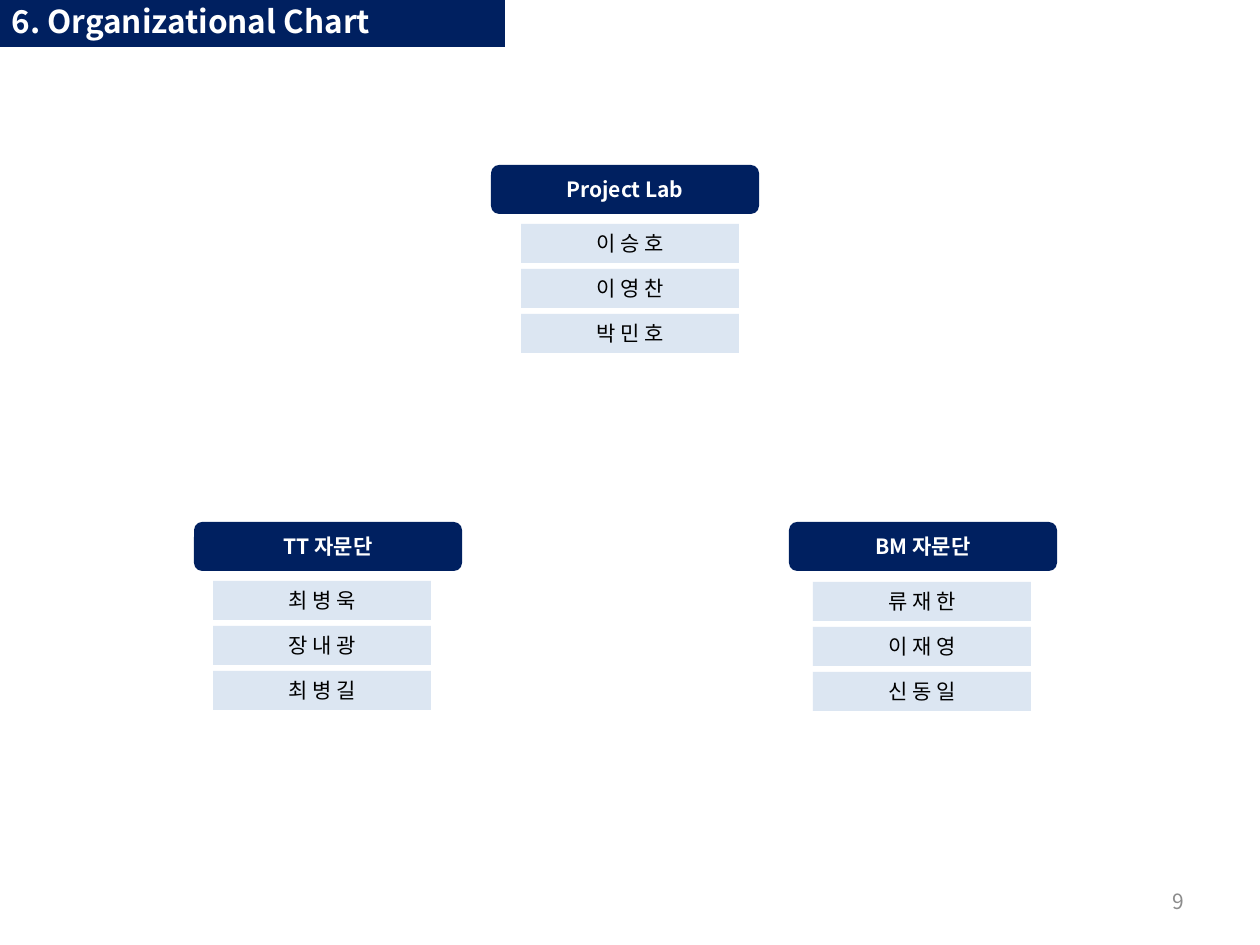
"""Build the organizational chart slide."""
from lxml import etree
from pptx import Presentation
from pptx.dml.color import RGBColor
from pptx.enum.shapes import MSO_SHAPE
from pptx.enum.text import MSO_ANCHOR, MSO_AUTO_SIZE, PP_ALIGN
from pptx.oxml.ns import qn
from pptx.util import Emu, Pt

RECTANGLE, ROUNDED = MSO_SHAPE.RECTANGLE, MSO_SHAPE.ROUNDED_RECTANGLE
TOP, MIDDLE = MSO_ANCHOR.TOP, MSO_ANCHOR.MIDDLE
LEFT, CENTER, RIGHT = PP_ALIGN.LEFT, PP_ALIGN.CENTER, PP_ALIGN.RIGHT
NO_AUTOFIT = MSO_AUTO_SIZE.NONE

TITLE = "6. Organizational Chart"
PAGE_NUMBER = "9"
TEAMS = [
    {"name": "Project Lab", "at": (491, 165), "members_at": (521, 224),
     "members": ["이 승 호", "이 영 찬", "박 민 호"]},
    {"name": "TT 자문단", "at": (194, 522), "members_at": (213, 581),
     "members": ["최 병 욱", "장 내 광", "최 병 길"]},
    {"name": "BM 자문단", "at": (789, 522), "members_at": (813, 582),
     "members": ["류 재 한", "이 재 영", "신 동 일"]},
]

FONT = "Noto Sans CJK KR"
NAVY, PALE, WHITE, BLACK, GRAY = "002060", "DCE6F2", "FFFFFF", "000000", "8C8C8C"
SLIDE_SIZE = (1260, 945)
TITLE_BOX = (-1, -4, 506, 51)
NUMBER_BOX = (903, 876, 294, 50)
TEAM_SIZE = (268, 49)
MEMBER_SIZE = (218, 39)
MEMBER_PITCH = 45
EMU_PER_PX = 914400 / 126


def px(length):
    return Emu(round(length * EMU_PER_PX))


def color(value):
    return RGBColor.from_string(value)


def fill(shape, value):
    shape.fill.solid()
    shape.fill.fore_color.rgb = color(value)
    shape.line.fill.background()


def write(shape, text, text_color, size=12, bold=False, align=CENTER, anchor=MIDDLE):
    frame = shape.text_frame
    frame.text = text
    frame.word_wrap = True
    frame.auto_size = NO_AUTOFIT
    frame.vertical_anchor = anchor
    paragraph = frame.paragraphs[0]
    paragraph.alignment = align
    for run in paragraph.runs:
        font = run.font
        font.name, font.size, font.bold = FONT, Pt(size), bold
        font.color.rgb = color(text_color)
        east_asian = etree.SubElement(run._r.get_or_add_rPr(), qn("a:ea"))
        east_asian.set("typeface", FONT)


def add_box(slide, kind, box, text, fill_color, text_color, bold=False):
    shape = slide.shapes.add_shape(kind, *map(px, box))
    shape.shadow.inherit = False
    fill(shape, fill_color)
    write(shape, text, text_color, bold=bold)


def add_team(slide, team):
    add_box(slide, ROUNDED, team["at"] + TEAM_SIZE, team["name"], NAVY, WHITE, True)
    left, top = team["members_at"]
    for row, member in enumerate(team["members"]):
        box = (left, top + row * MEMBER_PITCH) + MEMBER_SIZE
        add_box(slide, RECTANGLE, box, member, PALE, BLACK)


def main():
    presentation = Presentation()
    presentation.slide_width, presentation.slide_height = map(px, SLIDE_SIZE)
    slide = presentation.slides.add_slide(presentation.slide_layouts[5])

    title = slide.shapes.title
    title.left, title.top, title.width, title.height = map(px, TITLE_BOX)
    fill(title, NAVY)
    write(title, TITLE, WHITE, size=18, bold=True, align=LEFT, anchor=TOP)

    for team in TEAMS:
        add_team(slide, team)

    number = slide.shapes.add_textbox(*map(px, NUMBER_BOX))
    write(number, PAGE_NUMBER, GRAY, align=RIGHT)
    presentation.save("out.pptx")


if __name__ == "__main__":
    main()
